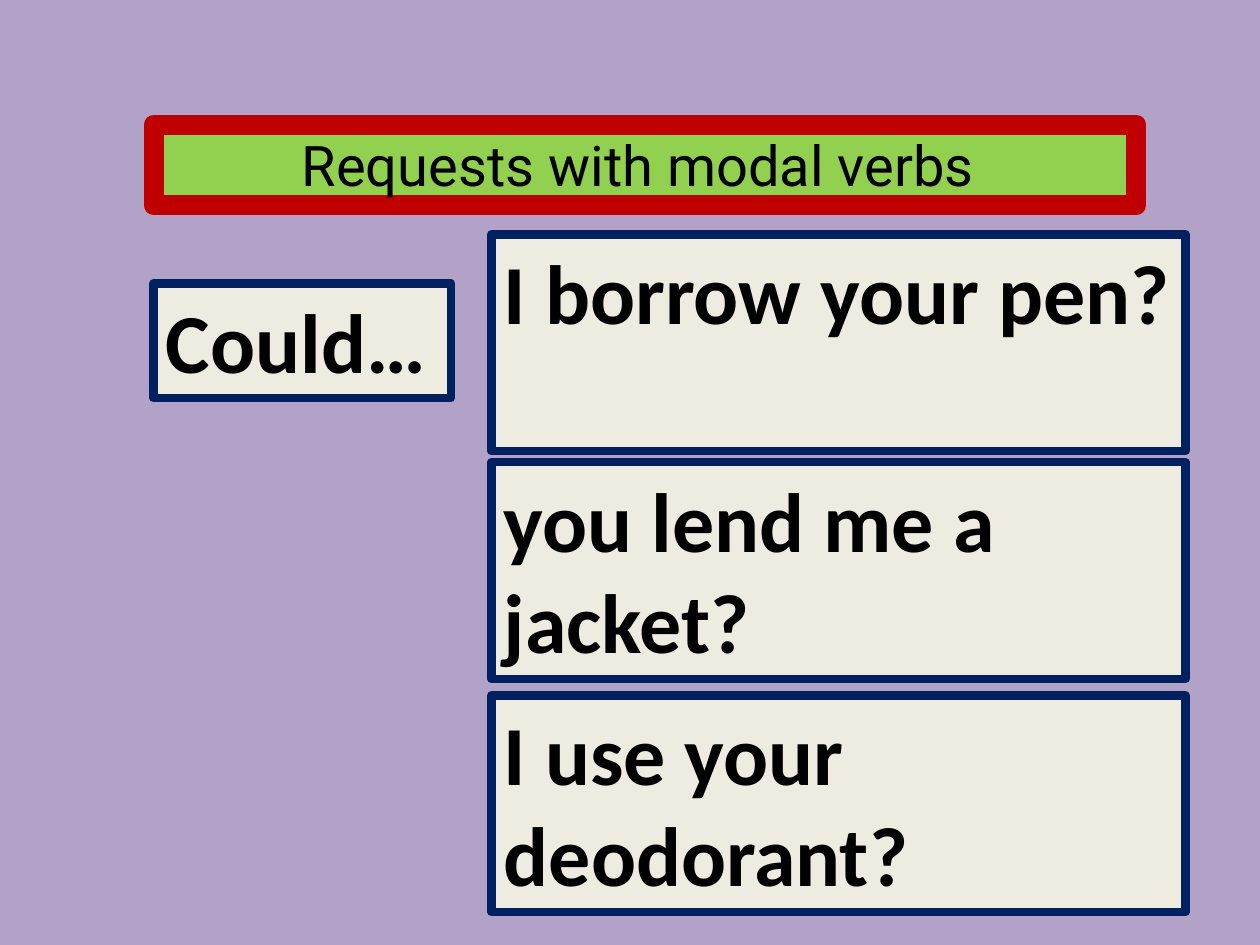
import pptx
import pptx.dml.color
import pptx.enum.shapes
import pptx.enum.text
import pptx.util

Pt = pptx.util.Pt
ALIGN = pptx.enum.text.PP_ALIGN

COLORS = {
    "background": "B3A2C7",
    "title_fill": "92D050",
    "title_border": "C00000",
    "card_fill": "EEECE1",
    "card_border": "002060",
    "text": "000000",
}

REQUESTS = [
    (133.9, "I borrow your pen?"),
    (264.2, "you lend me a jacket?"),
    (397.4, "I use your deodorant?"),
]


def color(name):
    return pptx.dml.color.RGBColor.from_string(COLORS[name])


def add_box(slide, bounds, text, style, border_width, alignment):
    """Add a bordered rectangle filled and outlined in the style's colours."""
    shape = slide.shapes.add_shape(
        pptx.enum.shapes.MSO_SHAPE.RECTANGLE, *[Pt(length) for length in bounds]
    )
    shape.shadow.inherit = False
    shape.fill.solid()
    shape.fill.fore_color.rgb = color(style + "_fill")
    shape.line.color.rgb = color(style + "_border")
    shape.line.width = Pt(border_width)

    text_frame = shape.text_frame
    text_frame.word_wrap = True
    text_frame.vertical_anchor = pptx.enum.text.MSO_ANCHOR.TOP
    text_frame.text = text
    paragraph = text_frame.paragraphs[0]
    paragraph.alignment = alignment
    return paragraph.runs[0].font


def add_title(slide, text):
    font = add_box(slide, (87.8, 71.3, 561.6, 46.1), text, "title", 11.5, ALIGN.CENTER)
    format_font(font, "Roboto", 32)


def add_card(slide, bounds, text):
    font = add_box(slide, bounds, text, "card", 4.75, ALIGN.LEFT)
    format_font(font, "Calibri", 48, bold=True)


def format_font(font, name, size, bold=False):
    font.name = name
    font.size = Pt(size)
    font.bold = bold
    font.color.rgb = color("text")


def main():
    presentation = pptx.Presentation()
    presentation.slide_width = Pt(720)
    presentation.slide_height = Pt(540)
    slide = presentation.slides.add_slide(presentation.slide_layouts[6])
    slide.background.fill.solid()
    slide.background.fill.fore_color.rgb = color("background")

    add_title(slide, "Requests with modal verbs ")
    for top, text in REQUESTS:
        add_card(slide, (280.8, top, 396.7, 123.8), text)
    add_card(slide, (87.8, 162, 169.9, 65.5), "Could…")

    presentation.save("out.pptx")


if __name__ == "__main__":
    main()
